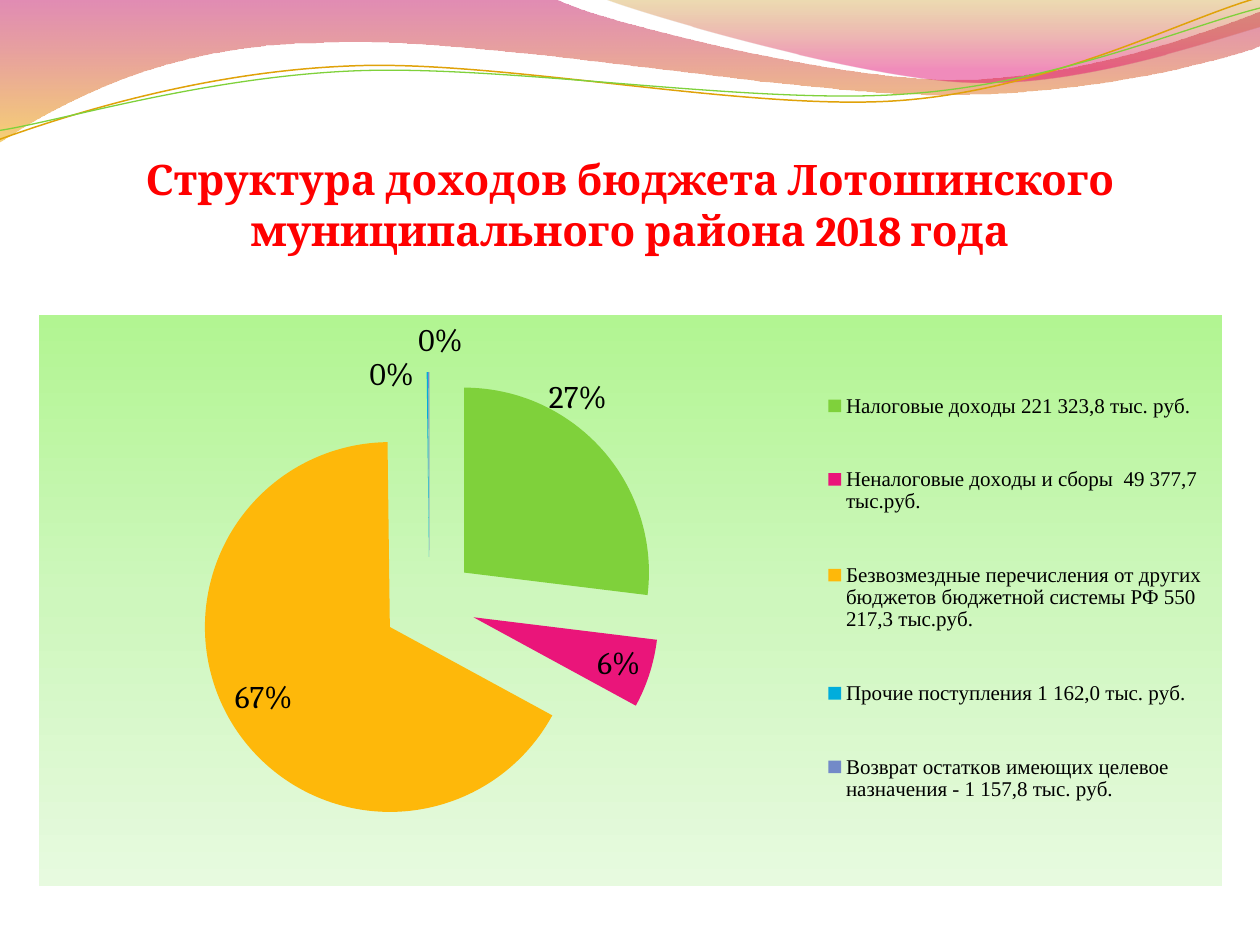
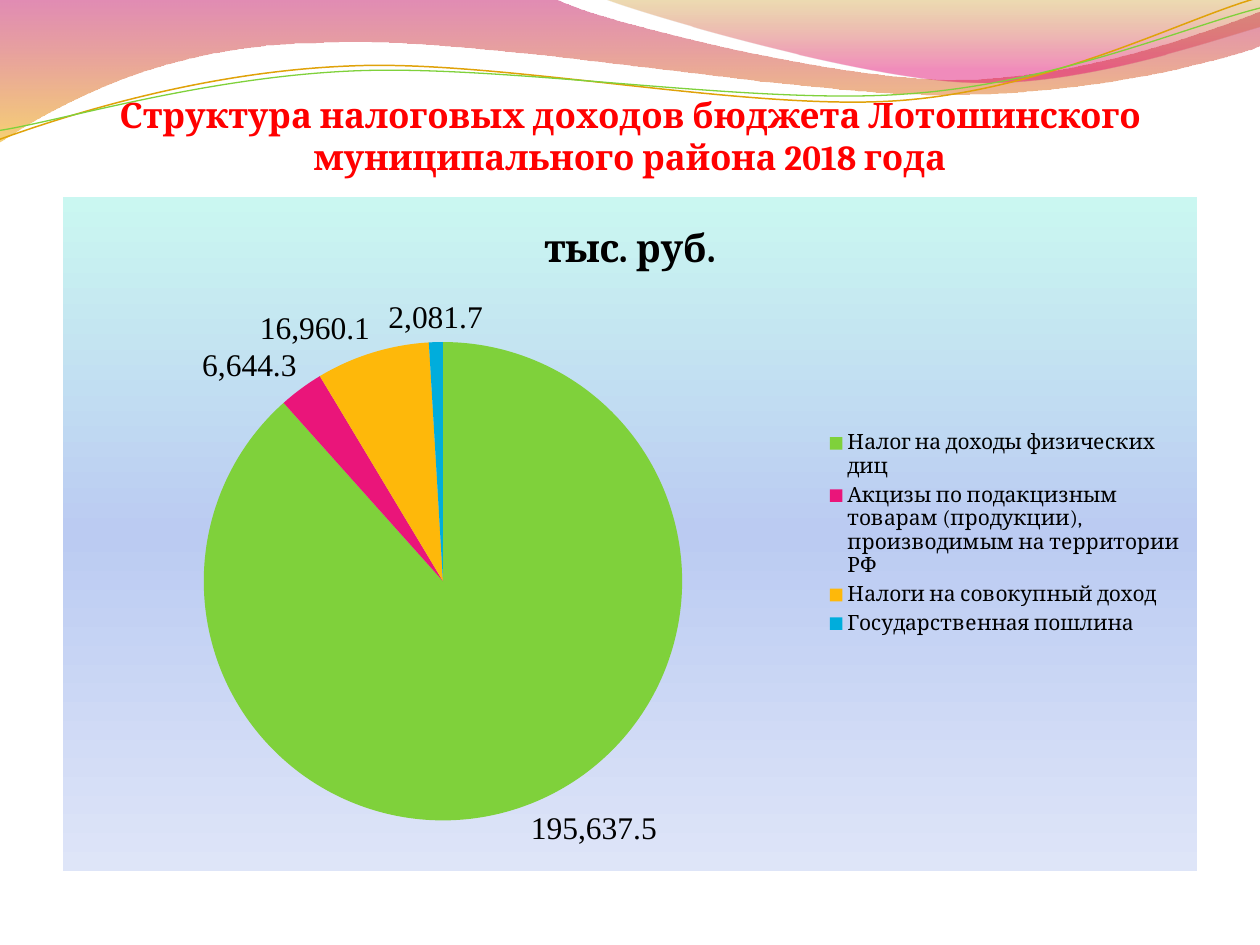
from dataclasses import dataclass

from lxml.etree import SubElement
from pptx import Presentation
from pptx.chart.data import CategoryChartData
from pptx.dml.color import RGBColor
from pptx.enum.chart import XL_CHART_TYPE as ChartType
from pptx.enum.chart import XL_LABEL_POSITION as LabelPosition
from pptx.enum.chart import XL_LEGEND_POSITION as LegendPosition
from pptx.enum.text import MSO_ANCHOR as Anchor
from pptx.enum.text import MSO_AUTO_SIZE as AutoSize
from pptx.enum.text import PP_ALIGN as Align
from pptx.oxml import parse_xml
from pptx.oxml.ns import nsdecls, qn
from pptx.util import Pt

PX = 9144  # 100 px to the inch


@dataclass(frozen=True)
class Theme:
    heading: str = "FF0000"
    ink: str = "000000"
    slices: tuple = ("7FD13B", "EA157A", "FEB80A", "00ADDC", "738AC8")
    gold_line: str = "E0A209"
    green_line: str = "7FD13B"
    font: str = "Cambria"
    number_font: str = "Times New Roman"
    label_size: int = 18
    legend_size: int = 12
    chart_title_size: int = 22


THEME = Theme()


def gradient(stops):
    """Top-to-bottom gradient from (position, colour, opacity) stops, in percent."""
    stop_xml = "".join(
        f'<a:gs pos="{position * 1000}"><a:srgbClr val="{colour}">'
        f'<a:alpha val="{opacity * 1000}"/></a:srgbClr></a:gs>'
        for position, colour, opacity in stops)
    return (f'<a:gradFill {nsdecls("a")} rotWithShape="1"><a:gsLst>{stop_xml}</a:gsLst>'
            '<a:lin ang="5400000" scaled="0"/></a:gradFill>')


def manual_layout(left, top, width=None, height=None, target="", edge=True):
    """Chart layout in fractions of the chart; without edge, an offset."""
    parts = [f'<c:layoutTarget val="{target}"/>'] if target else []
    if edge:
        parts += ['<c:xMode val="edge"/>', '<c:yMode val="edge"/>']
    for tag, value in zip("xywh", (left, top, width, height)):
        if value is not None:
            parts.append(f'<c:{tag} val="{value}"/>')
    return (f'<c:layout {nsdecls("c")}><c:manualLayout>{"".join(parts)}'
            '</c:manualLayout></c:layout>')


# Ribbons: start point, then Bezier segments (6 numbers) or straight ones (2 numbers)
LINE_TILT = 357.3
RIBBONS = [
    dict(start=(0, -1), stops=[(0, "BD0059", 45), (100, "F0AB00", 55)], segments=[
        (440, -1), (476, 17, 664, 63, 758, 63), (853, 63, 958, 26, 1000, 9),
        (1001, 36), (983, 44, 870, 76, 746, 75), (622, 75, 382, 28, 257, 34),
        (129, 35, 46, 83, -1, 113), (0, -1)]),
    dict(start=(479, -1), stops=[(0, "C38B00", 30), (80, "E1006B", 45)], segments=[
        (509, 11, 682, 62, 769, 65), (856, 69, 961, 32, 1000, 21), (1000, 0), (479, -1)]),
    dict(start=(-2, 87), line=THEME.gold_line, weight=0.85, segments=[
        (47, 72, 158, 41, 278, 42), (396, 42, 591, 93, 712, 90),
        (832, 87, 940, 36, 1000, 22)]),
    dict(start=(-2, 80), line=THEME.green_line, weight=0.75, segments=[
        (46, 75, 164, 45, 283, 46), (404, 47, 596, 88, 716, 85),
        (835, 83, 942, 42, 1002, 30)]),
]

SLIDES = [
    dict(
        title="Структура доходов бюджета Лотошинского муниципального района 2018 года",
        title_size=24, title_box=(50, 77, 900, 125), space_after=3,
        chart_box=(31, 250, 939, 453), series="Series 1", chart_title=None,
        background=[(0, "B2F592", 100), (50, "CEF7BD", 100), (100, "E7FADF", 100)],
        income=[
            ("Налоговые доходы 221 323,8 тыс. руб.", 27),
            ("Неналоговые доходы и сборы  49 377,7 тыс.руб.", 6),
            ("Безвозмездные перечисления от других бюджетов бюджетной системы РФ "
             "550 217,3 тыс.руб.", 67),
            ("Прочие поступления 1 162,0 тыс. руб.", 0.1),
            ("Возврат остатков имеющих целевое назначения - 1 157,8 тыс. руб.", 0.1)],
        percent=True, number_format="0%", label_font=THEME.font,
        label_position=LabelPosition.BEST_FIT, legend_font=THEME.number_font,
        explosion=25, plot_layout=(0.06, 0.1, 0.54, 0.81),
        legend_layout=(0.66, 0.05, 0.33, 0.89),
        label_offsets={0: (-0.05, -0.05), 3: (-0.03, 0.05), 4: (0.01, -0.01)}),
    dict(
        title="Структура налоговых доходов бюджета Лотошинского муниципального района 2018 года",
        title_size=20, title_box=(50, 77, 900, 64), space_after=0,
        chart_box=(50, 156, 900, 535), series="тыс. руб.", chart_title="тыс. руб.",
        background=[(0, "CAF7F1", 100), (50, "BBCBF2", 100), (100, "DEE5F8", 100)],
        income=[
            ("Налог на доходы физических диц", 195637.5),
            ("Акцизы по подакцизным товарам (продукции), производимым на территории РФ",
             6644.3),
            ("Налоги на совокупный доход", 16960.1),
            ("Государственная пошлина", 2081.7)],
        percent=False, number_format="#,##0.0", label_font=THEME.number_font,
        label_position=LabelPosition.OUTSIDE_END, legend_font=THEME.font,
        explosion=0, plot_layout=None, legend_layout=None, label_offsets={}),
]

prs = Presentation()
prs.slide_width, prs.slide_height = 1000 * PX, 750 * PX
title_only = prs.slide_layouts[5]

for page in SLIDES:
    slide = prs.slides.add_slide(title_only)

    # Ribbons are drawn once and moved to the shared layout
    if page is SLIDES[0]:
        for number, ribbon in enumerate(RIBBONS):
            start_x, start_y = ribbon["start"]
            builder = slide.shapes.build_freeform(start_x * PX, start_y * PX)
            builder.add_line_segments(
                [(x * PX, y * PX) for segment in ribbon["segments"]
                 for x, y in zip(segment[::2], segment[1::2])], close="stops" in ribbon)
            wave = builder.convert_to_shape()

            # Three points in a row become one Bezier segment
            outline = next(wave.element.iter(qn("a:path")))
            corners = iter(outline.findall(qn("a:lnTo")))
            for segment in ribbon["segments"]:
                group = [next(corners) for _ in segment[::2]]
                if len(group) == 3:
                    curve = SubElement(outline, qn("a:cubicBezTo"))
                    group[0].addprevious(curve)
                    for corner in group:
                        curve.append(corner[0])
                        outline.remove(corner)

            wave.shadow.inherit = False
            wave.fill.background()
            if "stops" in ribbon:
                wave.line.fill.background()
                properties = wave.element.spPr
                properties.replace(properties.find(qn("a:noFill")),
                                   parse_xml(gradient(ribbon["stops"])))
            else:
                wave.rotation = LINE_TILT
                wave.line.color.rgb = RGBColor.from_string(ribbon["line"])
                wave.line.width = Pt(ribbon["weight"])
            wave.element.nvSpPr.cNvPr.set("id", str(100 + number))
            title_only.shapes.element.append(wave.element)

    # Title
    heading = slide.shapes.title
    heading.left, heading.top, heading.width, heading.height = (
        v * PX for v in page["title_box"])
    frame = heading.text_frame
    frame.word_wrap = True
    frame.auto_size = AutoSize.NONE
    frame.vertical_anchor = Anchor.BOTTOM
    frame.margin_left = frame.margin_right = frame.margin_bottom = 0
    frame.margin_top = 5 * PX
    paragraph = frame.paragraphs[0]
    paragraph.alignment = Align.CENTER
    paragraph.space_before = Pt(0)
    paragraph.space_after = Pt(page["space_after"])
    run = paragraph.add_run()
    run.text = page["title"]
    run.font.name, run.font.size, run.font.bold = THEME.font, Pt(page["title_size"]), True
    run.font.color.rgb = RGBColor.from_string(THEME.heading)

    # Pie chart
    data = CategoryChartData(number_format="General")
    data.categories = [name for name, _ in page["income"]]
    data.add_series(page["series"], [value for _, value in page["income"]])
    pie = slide.shapes.add_chart(
        ChartType.PIE, *(v * PX for v in page["chart_box"]), data).chart
    pie.font.name, pie.font.size = THEME.font, Pt(THEME.label_size)
    pie.font.color.rgb = RGBColor.from_string(THEME.ink)
    pie.element.find(qn("c:txPr")).addprevious(parse_xml(
        f'<c:spPr {nsdecls("c", "a")}>{gradient(page["background"])}'
        '<a:ln><a:noFill/></a:ln></c:spPr>'))

    pie.has_title = page["chart_title"] is not None
    if pie.has_title:
        unit = pie.chart_title.text_frame.paragraphs[0].add_run()
        unit.text = page["chart_title"]
        unit.font.name, unit.font.bold = THEME.font, True
        unit.font.size = Pt(THEME.chart_title_size)
        unit.font.color.rgb = RGBColor.from_string(THEME.ink)

    # Slices
    pie.plots[0].vary_by_categories = True
    income = pie.plots[0].series[0]
    for index, colour in enumerate(THEME.slices[:len(page["income"])]):
        slice_fill = income.points[index].format.fill
        slice_fill.solid()
        slice_fill.fore_color.rgb = RGBColor.from_string(colour)
    if page["explosion"]:
        first_slice = next(pie.element.iter(qn("c:dPt")))
        first_slice.addprevious(parse_xml(
            f'<c:explosion {nsdecls("c")} val="{page["explosion"]}"/>'))

    # Data labels, without leader lines
    labels = income.data_labels
    labels.show_percentage = page["percent"]
    labels.show_value = not page["percent"]
    labels.number_format, labels.number_format_is_linked = page["number_format"], False
    labels.position = page["label_position"]
    labels.font.name, labels.font.size = page["label_font"], Pt(THEME.label_size)
    labels.font.color.rgb = RGBColor.from_string(THEME.ink)
    label_list = next(pie.element.iter(qn("c:dLbls")))
    for leader in label_list.findall(qn("c:showLeaderLines")):
        leader.set("val", "0")
    for place, (index, offset) in enumerate(page["label_offsets"].items()):
        label_list.insert(place, parse_xml(
            f'<c:dLbl {nsdecls("c")}><c:idx val="{index}"/>'
            f'{manual_layout(*offset, edge=False)}'
            f'<c:numFmt formatCode="{page["number_format"]}" sourceLinked="0"/>'
            '<c:dLblPos val="bestFit"/><c:showLegendKey val="0"/><c:showVal val="0"/>'
            '<c:showCatName val="0"/><c:showSerName val="0"/><c:showPercent val="1"/>'
            '<c:showBubbleSize val="0"/></c:dLbl>'))

    # Legend
    pie.has_legend = True
    pie.legend.position = LegendPosition.RIGHT
    pie.legend.include_in_layout = False
    pie.legend.font.name = page["legend_font"]
    pie.legend.font.size = Pt(THEME.legend_size)
    pie.legend.font.color.rgb = RGBColor.from_string(THEME.ink)

    # Fixed places of plot and legend
    for tag, box, target, place in (("c:plotArea", page["plot_layout"], "inner", 0),
                                    ("c:legend", page["legend_layout"], "", 1)):
        if box:
            part = next(pie.element.iter(qn(tag)))
            for automatic in part.findall(qn("c:layout")):
                part.remove(automatic)
            part.insert(place, parse_xml(manual_layout(*box, target=target)))

prs.save("out.pptx")
